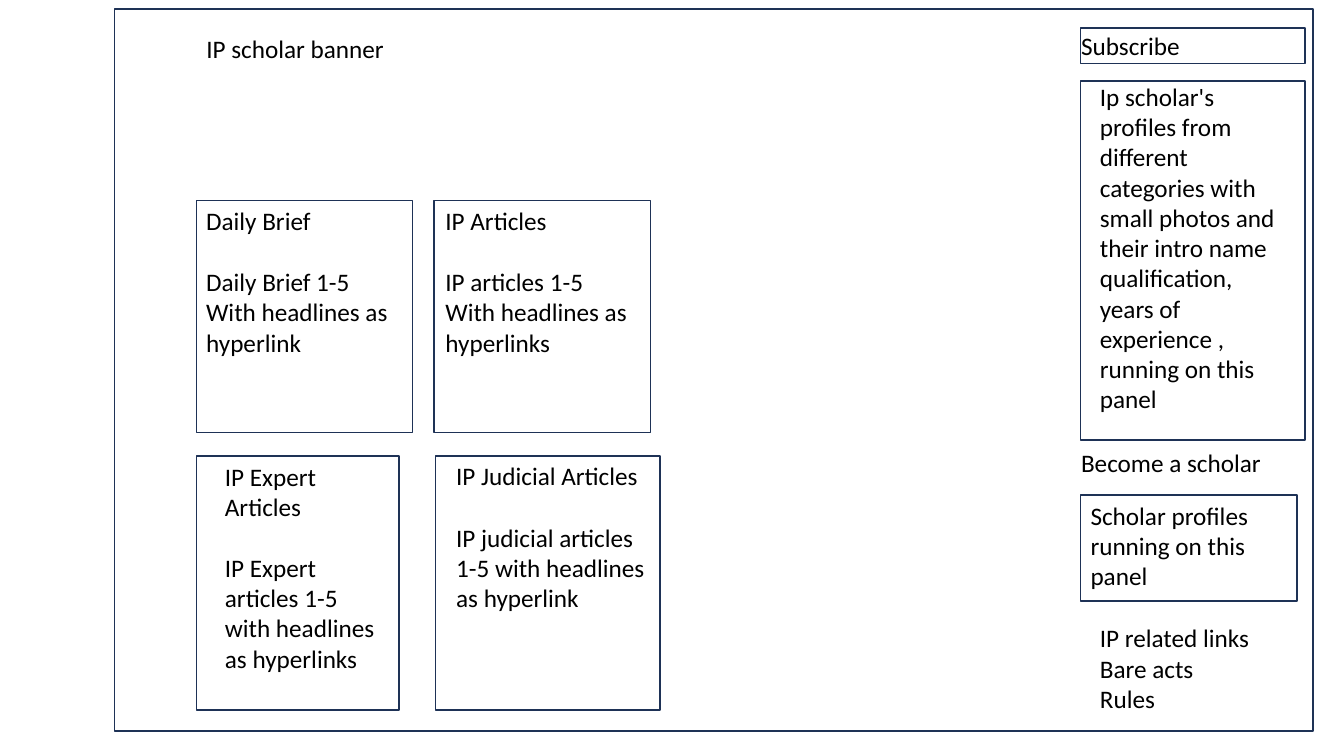
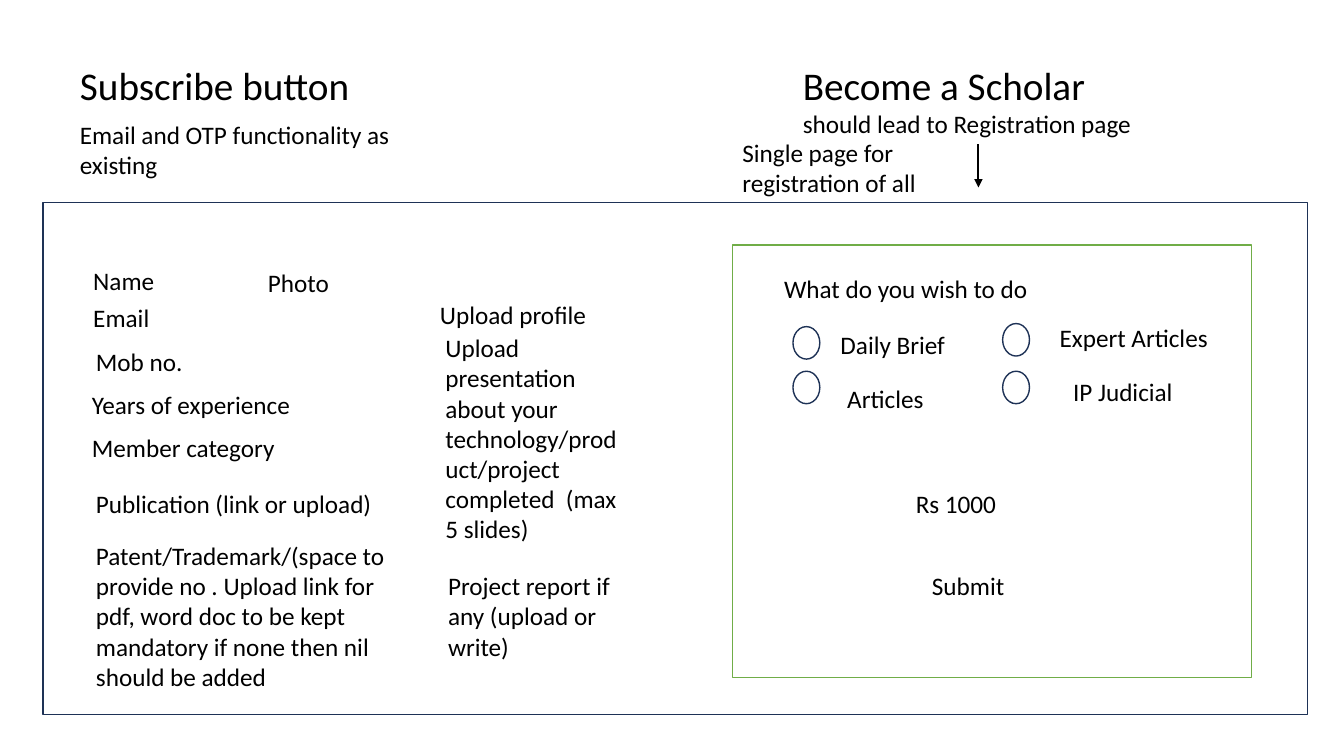
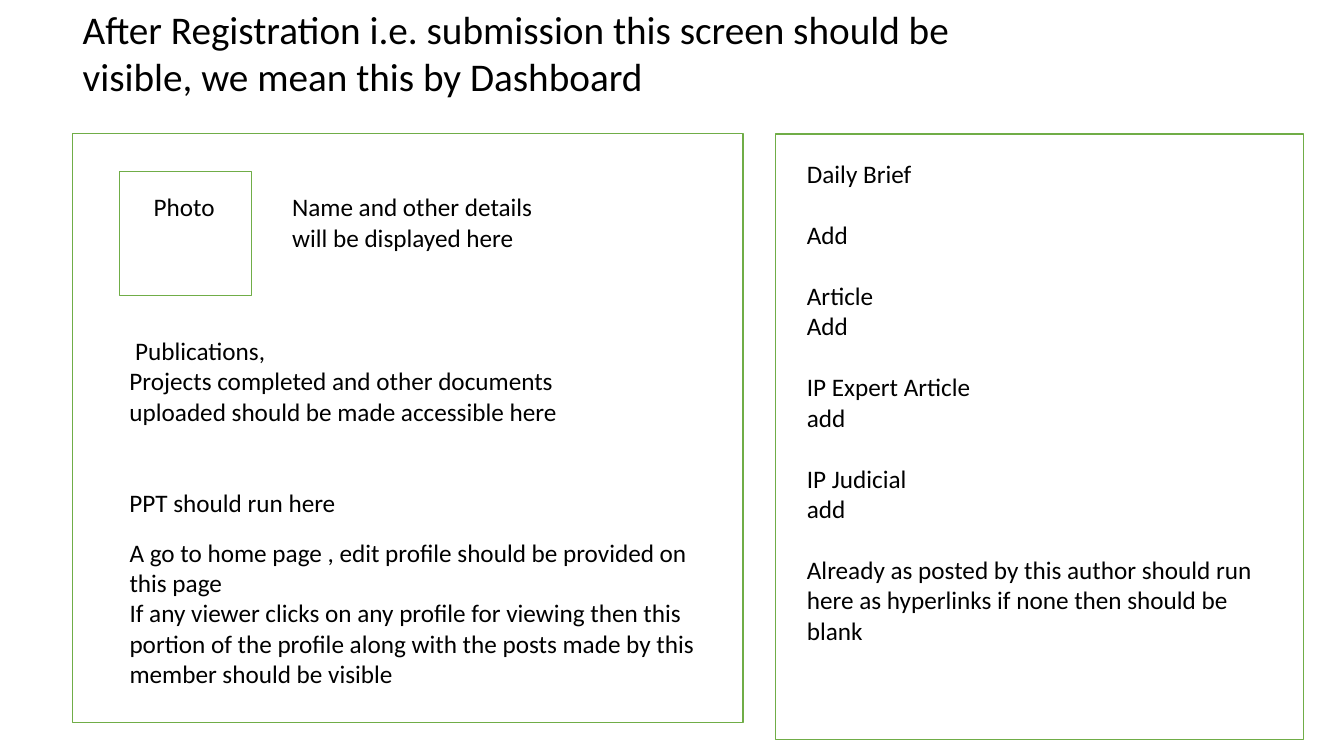
from dataclasses import dataclass

import pptx
import pptx.dml.color
import pptx.enum.shapes
import pptx.enum.text
import pptx.oxml.ns
import pptx.util
from lxml import etree

WIDE, HIGH = 13.33, 7.5
NAVY, GREEN, WHITE, BLACK = "1E3256", "70AD47", "FFFFFF", "000000"
FONT, BODY, HEAD = "Calibri", 18, 28
LINE = 22  # points in one line of body text
RECT = pptx.enum.shapes.MSO_SHAPE.RECTANGLE
OVAL = pptx.enum.shapes.MSO_SHAPE.OVAL


# All places and sizes are percentages of the slide's width and height.
@dataclass(frozen=True)
class Box:
    x: float
    y: float
    w: float
    h: float
    edge: str = NAVY
    fill: str | None = None
    kind: pptx.enum.shapes.MSO_SHAPE = RECT


@dataclass(frozen=True)
class Para:
    text: str
    skip: int = 0
    size: int = BODY


@dataclass(frozen=True)
class Note:
    x: float
    y: float
    w: float
    h: float
    paras: tuple[Para, ...]


@dataclass(frozen=True)
class Arrow:
    x: float
    top: float
    end: float


@dataclass(frozen=True)
class Page:
    title: Note
    boxes: list[Box]
    notes: list[Note]
    arrows: tuple[Arrow, ...] = ()


def across(share: float) -> int:
    return pptx.util.Inches(WIDE * share / 100)


def down(share: float) -> int:
    return pptx.util.Inches(HIGH * share / 100)


def color(code: str) -> pptx.dml.color.RGBColor:
    return pptx.dml.color.RGBColor.from_string(code)


def note(x: float, y: float, w: float, *items: str | Para, h: float = 5.3) -> Note:
    paras = tuple(Para(item) if isinstance(item, str) else item for item in items)
    return Note(x, y, w, h, paras)


def place(item: Box | Note) -> tuple[int, int, int, int]:
    return across(item.x), down(item.y), across(item.w), down(item.h)


def write(shape, item: Note) -> None:
    frame = shape.text_frame
    frame.word_wrap = True
    frame.auto_size = pptx.enum.text.MSO_AUTO_SIZE.NONE
    frame.vertical_anchor = pptx.enum.text.MSO_ANCHOR.TOP
    for index, para in enumerate(item.paras):
        line = frame.paragraphs[0] if index == 0 else frame.add_paragraph()
        line.alignment = pptx.enum.text.PP_ALIGN.LEFT
        line.space_before = pptx.util.Pt(LINE * para.skip)
        run = line.add_run()
        run.text = para.text
        run.font.name = FONT
        run.font.size = pptx.util.Pt(para.size)
        run.font.color.rgb = color(BLACK)


def draw_title(slide, item: Note) -> None:
    title = slide.shapes.title
    title.left, title.top, title.width, title.height = place(item)
    write(title, item)


def draw_box(slide, box: Box) -> None:
    shape = slide.shapes.add_shape(box.kind, *place(box))
    shape.shadow.inherit = False
    if box.fill:
        shape.fill.solid()
        shape.fill.fore_color.rgb = color(box.fill)
    else:
        shape.fill.background()
    shape.line.color.rgb = color(box.edge)
    shape.line.width = pptx.util.Pt(1)


def draw_arrow(slide, arrow: Arrow) -> None:
    x = across(arrow.x)
    link = slide.shapes.add_connector(
        pptx.enum.shapes.MSO_CONNECTOR.STRAIGHT, x, down(arrow.top), x, down(arrow.end))
    link.line.color.rgb = color(BLACK)
    link.line.width = pptx.util.Pt(1.5)
    tag = pptx.oxml.ns.qn
    etree.SubElement(link.line._get_or_add_ln(), tag("a:tailEnd"), type="triangle")
    etree.SubElement(link._element.spPr, tag("a:effectLst"))


def draw_page(deck, page: Page) -> None:
    slide = deck.slides.add_slide(deck.slide_layouts.get_by_name("Title Only"))
    draw_title(slide, page.title)
    for box in page.boxes:
        draw_box(slide, box)
    for arrow in page.arrows:
        draw_arrow(slide, arrow)
    for item in page.notes:
        write(slide.shapes.add_textbox(*place(item)), item)


def home_page() -> Page:
    left, mid, side = 14.6, 32.4, 80.4
    top, low = 26.5, 60.3
    return Page(
        note(left, 3.7, 60.2, "IP scholar banner"),
        [
            Box(8.5, 1.2, 89.2, 95.5),
            Box(left, top, 16.1, 30.7),
            Box(mid - 0.1, top, 16.1, 30.7),
            Box(left, low, 15.1, 33.6),
            Box(mid, low, 16.7, 33.6),
            Box(side, 3.7, 16.7, 4.7),
            Box(side, 10.7, 16.7, 47.5),
            Box(side, 65.5, 16.1, 14),
        ],
        [
            note(left, top, 15.2, "Daily Brief", Para("Daily Brief 1-5", 1),
                 "With headlines as hyperlink", h=25.6),
            note(mid, top, 16.1, "IP Articles", Para("IP articles 1-5", 1),
                 "With headlines as hyperlinks", h=21.6),
            note(16, low, 12.6, "IP Expert Articles",
                 Para("IP Expert articles 1-5 with headlines as hyperlinks", 1), h=33.6),
            note(33.2, low, 16.1, "IP Judicial Articles",
                 Para("IP judicial articles 1-5 with headlines as hyperlink", 1), h=30.7),
            note(79.7, 3.3, 16.7, "Subscribe"),
            note(81.1, 10.1, 15.4,
                 "Ip scholar's profiles from different categories with small photos and "
                 "their intro name qualification, years of experience , running on this panel",
                 h=45.7),
            note(79.7, 58.5, 16.7, "Become a scholar"),
            note(side, 65.5, 16.1, "Scholar profiles running on this panel", h=13.5),
            note(81.1, 81.7, 15.4, "IP related links", "Bare acts", "Rules", h=13.5),
        ],
    )


def form_page() -> Page:
    spots = [(59, 43.2), (59, 49.1), (74.6, 42.8), (74.6, 49.1)]
    return Page(
        note(5.2, 7.5, 50, Para("Subscribe button", size=HEAD), h=7.6),
        [
            Box(3.2, 26.8, 94.1, 67.7),
            Box(54.5, 32.4, 38.6, 57.2, GREEN, WHITE),
            *(Box(x, y, 2, 4.3, kind=OVAL) for x, y in spots),
        ],
        [
            note(5.2, 15.1, 28.3, "Email and OTP functionality as existing", h=9.5),
            note(59, 7.5, 33.6, Para("Become a Scholar", size=HEAD),
                 "should lead to Registration page", h=11.7),
            note(54.5, 17.5, 15.7, "Single page for registration of all", h=9.5),
            note(6.2, 34.5, 12, "Name"),
            note(19.2, 34.7, 8, "Photo"),
            note(6.2, 39.3, 20.3, "Email"),
            note(6.4, 45.2, 20.9, "Mob no."),
            note(6.1, 50.9, 21.6, "Years of experience"),
            note(6.1, 56.5, 22.3, "Member category"),
            note(6.4, 64, 23.1, "Publication (link or upload)"),
            note(6.4, 70.8, 23.1,
                 "Patent/Trademark/(space to provide no . Upload link for pdf, word doc "
                 "to be kept mandatory if none then nil should be added", h=21.6),
            note(32, 38.9, 14, "Upload profile"),
            note(32.4, 43.3, 14.25,
                 "Upload presentation about your technology/product/project completed  "
                 "(max 5 slides)", h=29.6),
            note(32.6, 74.8, 13.8, "Project report if any (upload or write)", h=13.5),
            note(57.6, 35.5, 33.8, "What do you wish to do"),
            note(61.8, 42.9, 11.1, "Daily Brief"),
            note(62.3, 50, 11.3, "Articles"),
            note(78.1, 42, 14.6, "Expert Articles"),
            note(79.1, 49.1, 11.3, "IP Judicial"),
            note(67.4, 64, 15.9, "Rs 1000"),
            note(68.6, 74.8, 13.1, "Submit"),
        ],
        (Arrow(72.8, 19.1, 24.8),),
    )


def board_page() -> Page:
    left, top, inner = 5.4, 17.7, 8.9
    return Page(
        note(left, 0, 70.7,
             Para("After Registration i.e. submission this screen should be visible, "
                  "we mean this by Dashboard", size=HEAD), h=13.9),
        [
            Box(57.7, top, 39.3, 80.1, GREEN, WHITE),
            Box(left, top, 49.9, 77.9, GREEN, WHITE),
            Box(inner, 22.7, 9.8, 16.4, GREEN, WHITE),
        ],
        [
            note(59.3, 20.3, 36.3, "Daily Brief", Para("Add", 1), Para("Article", 1), "Add",
                 Para("IP Expert Article", 1), "add", Para("IP Judicial", 1), "add",
                 Para("Already as posted by this author should run here as hyperlinks "
                      "if none then should be blank", 1), h=70),
            note(10.7, 24.7, 6.8, "Photo"),
            note(21, 24.7, 21.2, "Name and other details will be displayed here", h=9.5),
            note(inner, 43.7, 36.5, " Publications,",
                 "Projects completed and other documents uploaded should be made "
                 "accessible here", Para("PPT should run here", 2), h=29.6),
            note(inner, 70.4, 44.6,
                 "A go to home page , edit profile should be provided on this page",
                 "If any viewer clicks on any profile for viewing then this portion of the "
                 "profile along with the posts made by this member should be visible", h=21.6),
        ],
    )


def main() -> None:
    deck = pptx.Presentation()
    deck.slide_width, deck.slide_height = across(100), down(100)
    for page in (home_page(), form_page(), board_page()):
        draw_page(deck, page)
    deck.save("out.pptx")


if __name__ == "__main__":
    main()
